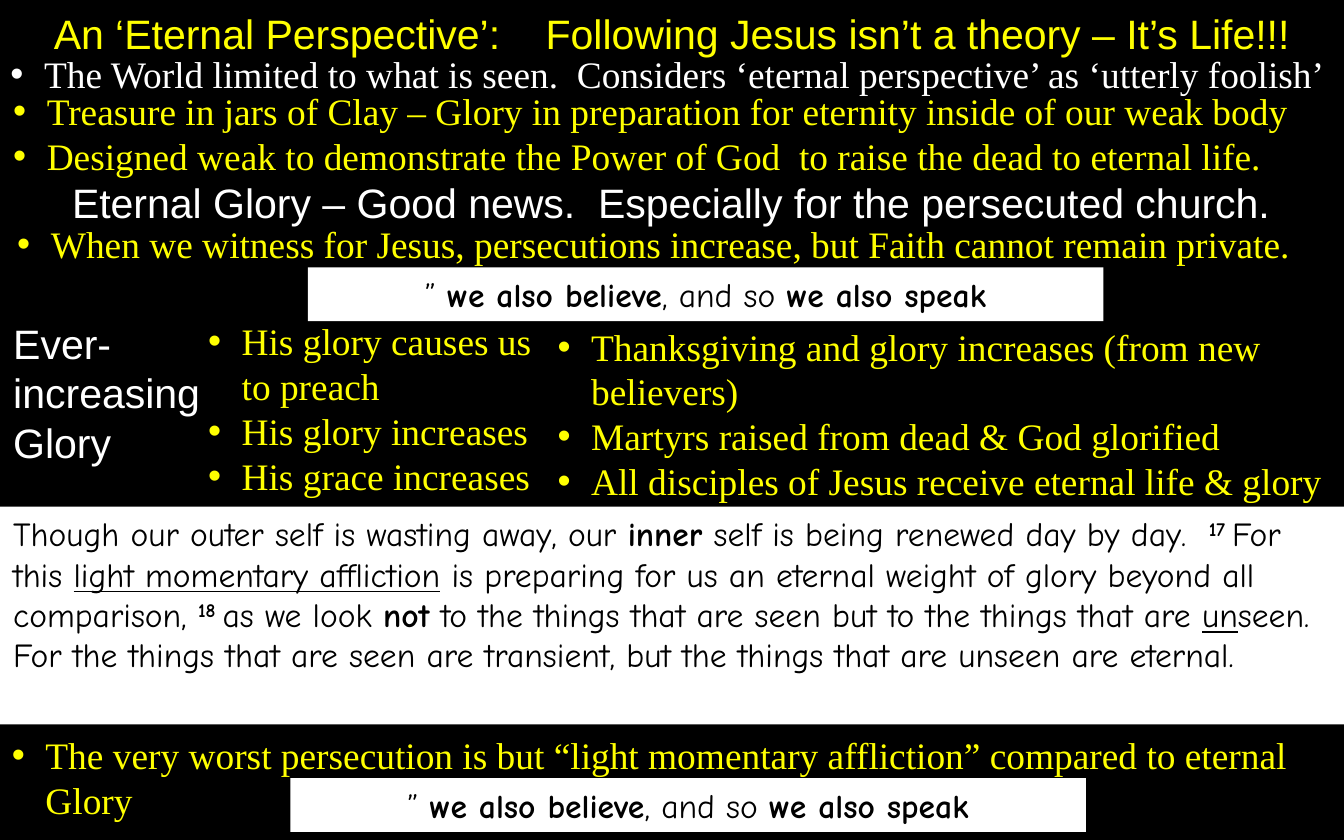
"""Build the 'Eternal Perspective' sermon slide."""
from lxml import etree
from pptx import Presentation
from pptx import util as u
from pptx.dml.color import RGBColor
from pptx.enum import shapes, text
from pptx.oxml.ns import qn

HUES = {"black": "000000", "white": "FFFFFF", "gold": "FFFF00"}
HEAD = {"name": "Arial", "size": u.Pt(22)}
BODY = {"name": "Times New Roman", "size": u.Pt(20)}
VERSE = {"name": "Comic Neue", "size": u.Pt(18)}
BOLD, LINE = {"bold": True}, {"underline": True}
LEFT, MID = text.PP_ALIGN.LEFT, text.PP_ALIGN.CENTER


def tone(name):
    return RGBColor.from_string(HUES[name])


def write(shape, paras, style, hue, align=LEFT, dots=False):
    frame = shape.text_frame
    frame.word_wrap = True
    frame.auto_size = text.MSO_AUTO_SIZE.NONE
    frame.vertical_anchor = text.MSO_ANCHOR.TOP
    for i, parts in enumerate(paras):
        para = frame.add_paragraph() if i else frame.paragraphs[0]
        para.alignment = align
        if dots:
            props = para._p.get_or_add_pPr()
            props.set("marL", str(u.Inches(0.25)))
            props.set("indent", str(u.Inches(-0.25)))
            etree.SubElement(props, qn("a:buFont")).set("typeface", "Arial")
            etree.SubElement(props, qn("a:buChar")).set("char", "•")
        for words, extra in [(parts, {})] if isinstance(parts, str) else parts:
            run = para.add_run()
            run.text = words
            for key, val in {**style, **extra}.items():
                setattr(run.font, key, val)
            run.font.color.rgb = tone(hue)
            if words.strip().isdigit():
                run._r.get_or_add_rPr().set("baseline", "30000")


deck = Presentation()
deck.slide_width, deck.slide_height = u.Inches(10), u.Inches(6.25)
slide = deck.slides.add_slide(deck.slide_layouts[5])
slide.background.fill.solid()
slide.background.fill.fore_color.rgb = tone("black")

title = slide.shapes.title
spot = {"left": 0, "top": 0.01, "width": 10, "height": 0.47}
for key, val in spot.items():
    setattr(title, key, u.Inches(val))
write(title, ["An ‘Eternal Perspective’:    Following Jesus isn’t a theory – It’s Life!!!"],
      HEAD, "gold", MID)

heads = [
    ((0.01, 1.27, 9.97, 0.47), MID,
     "Eternal Glory – Good news.  Especially for the persecuted church."),
    ((0, 2.32, 2.08, 1.21), LEFT, "Ever-increasing Glory"),
]
for box, align, words in heads:
    write(slide.shapes.add_textbox(*map(u.Inches, box)), [words], HEAD, "white", align)

lists = [
    ((-0.02, 0.33, 10, 0.44), "white", [
        "The World limited to what is seen.  Considers ‘eternal perspective’ as ‘utterly foolish’"]),
    ((0, 0.61, 10, 0.77), "gold", [
        "Treasure in jars of Clay – Glory in preparation for eternity inside of our weak body",
        "Designed weak to demonstrate the Power of God  to raise the dead to eternal life."]),
    ((0.03, 1.6, 10, 0.44), "gold", [
        "When we witness for Jesus, persecutions increase, but Faith cannot remain private."]),
    ((1.45, 2.32, 2.76, 1.45), "gold", [
        "His glory causes us to preach",
        "His glory increases",
        "His grace increases"]),
    ((4.05, 2.36, 5.92, 1.45), "gold", [
        "Thanksgiving and glory increases (from new believers)",
        "Martyrs raised from dead & God glorified",
        "All disciples of Jesus receive eternal life & glory"]),
    ((-0.01, 5.4, 10, 0.77), "gold", [
        "The very worst persecution is but “light momentary affliction” compared to eternal Glory"]),
]
for box, hue, items in lists:
    write(slide.shapes.add_textbox(*map(u.Inches, box)), items, BODY, hue, dots=True)

speak = [("” ", {}), ("we also believe", BOLD), (", and so ", {}), ("we also speak", BOLD)]
renew = [
    ("Though our outer self is wasting away, our ", {}),
    ("inner", BOLD),
    (" self is being renewed day by day.  ", {}),
    ("17 ", BOLD),
    ("For this ", {}),
    ("light momentary affliction", LINE),
    (" is preparing for us an eternal weight of glory beyond all comparison, ", {}),
    ("18 ", BOLD),
    ("as we look ", {}),
    ("not", BOLD),
    (" to the things that are seen but to the things that are ", {}),
    ("un", LINE),
    ("seen.  For the things that are seen are transient, "
     "but the things that are unseen are eternal.", {}),
]
verses = [
    ((2.29, 1.99, 5.92, 0.4), MID, speak),
    ((0, 3.77, 10, 1.62), LEFT, renew),
    ((2.16, 5.79, 5.92, 0.4), MID, speak),
]
for box, align, parts in verses:
    panel = slide.shapes.add_shape(shapes.MSO_SHAPE.RECTANGLE, *map(u.Inches, box))
    panel.shadow.inherit = False
    panel.fill.solid()
    panel.fill.fore_color.rgb = tone("white")
    panel.line.fill.background()
    write(panel, [parts], VERSE, "black", align)

deck.save("out.pptx")
